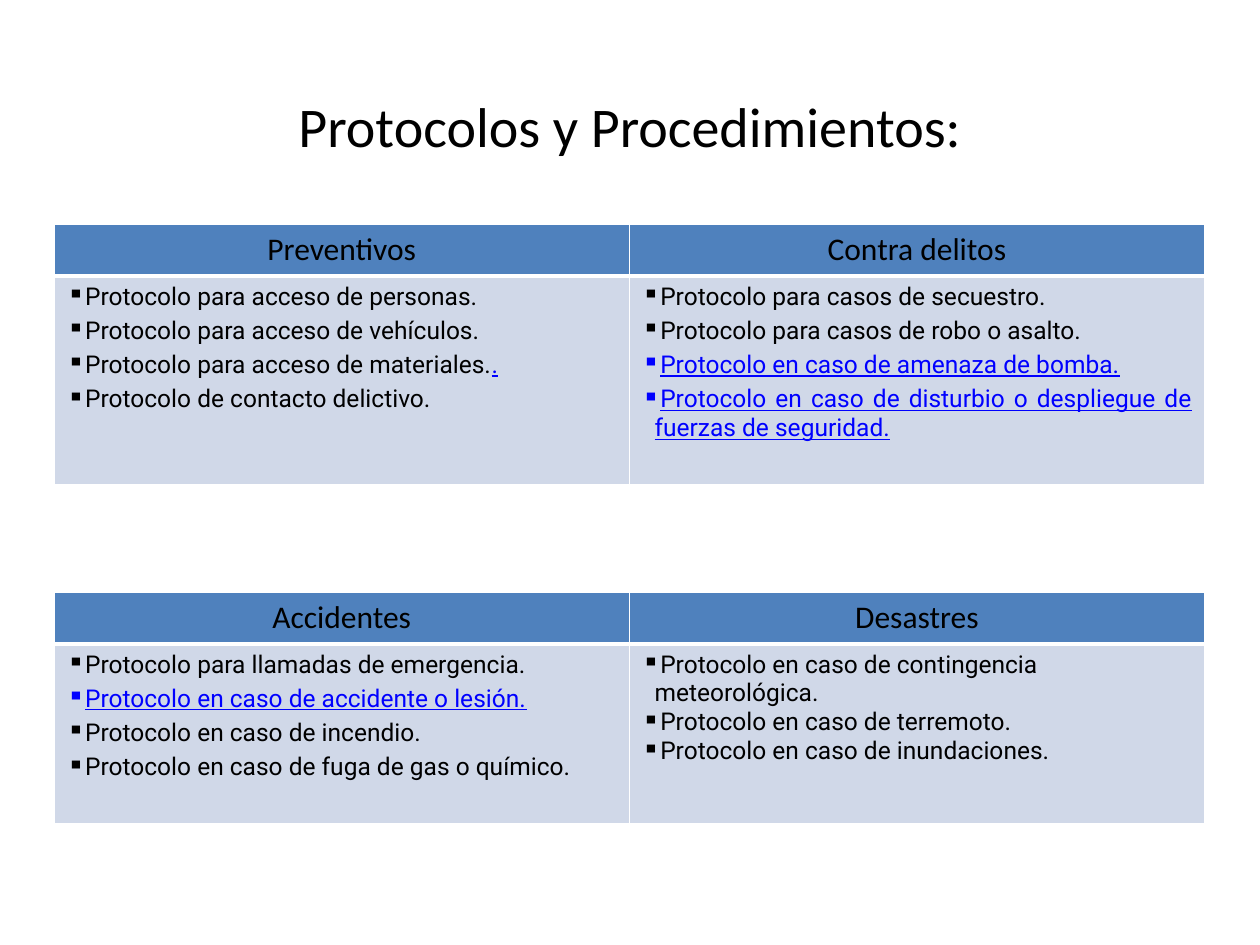
from dataclasses import dataclass
from typing import NamedTuple

from lxml import etree
from pptx import Presentation
from pptx import util as u
from pptx.dml.color import RGBColor
from pptx.enum import text
from pptx.oxml.ns import qn

COLORS = {"text": "000000", "link": "0000FF", "header": "4F81BD",
          "body": "D0D8E8", "border": "FFFFFF"}
LEFT, WIDTH, HEADER_HEIGHT = 0.43, 9.13, 0.41
JUSTIFY, ALIGN_LEFT = text.PP_ALIGN.JUSTIFY, text.PP_ALIGN.LEFT


class Item(NamedTuple):
    label: str
    hang: float = 0.1
    link: bool = False
    linked_tail: str = ""


@dataclass
class Group:
    title: str
    items: list[Item]
    align: text.PP_ALIGN = JUSTIFY
    space_after: float = 3


@dataclass
class Block:
    top: float
    body_height: float
    groups: list[Group]


BLOCKS = [
    Block(1.78, 1.66, [
        Group("Preventivos", [
            Item("Protocolo para acceso de personas.", 0),
            Item("Protocolo para acceso de vehículos.", 0),
            Item("Protocolo para acceso de materiales.", 0, linked_tail="."),
            Item("Protocolo de contacto delictivo.", 0),
        ]),
        Group("Contra delitos", [
            Item("Protocolo para casos de secuestro."),
            Item("Protocolo para casos de robo o asalto."),
            Item("Protocolo en caso de amenaza de bomba.", link=True),
            Item("Protocolo en caso de disturbio o despliegue de fuerzas de "
                 "seguridad.", link=True),
        ]),
    ]),
    Block(4.7, 1.43, [
        Group("Accidentes", [
            Item("Protocolo para llamadas de emergencia.", 0.11),
            Item("Protocolo en caso de accidente o lesión.", link=True),
            Item("Protocolo en caso de incendio."),
            Item("Protocolo en caso de fuga de gas o químico."),
        ]),
        Group("Desastres", [
            Item("Protocolo en caso de contingencia meteorológica."),
            Item("Protocolo en caso de terremoto.", 0),
            Item("Protocolo en caso de inundaciones.", 0),
        ], ALIGN_LEFT, 0),
    ]),
]


def rgb(name: str) -> RGBColor:
    return RGBColor.from_string(COLORS[name])


def style_run(r, size: float, face: str, link: bool = False) -> None:
    r.font.size = u.Pt(size)
    r.font.name = face
    r.font.color.rgb = rgb("link" if link else "text")
    r.font.underline = link


def write_heading(tf, label: str, size: float) -> None:
    p = tf.paragraphs[0]
    p.text = label
    p.alignment = text.PP_ALIGN.CENTER
    style_run(p.runs[0], size, "Calibri")


def style_cell(cell, fill: str, bottom: float = 1) -> None:
    """Set the fill and the white borders, whose bottom width may differ."""
    tc_pr = cell._tc.get_or_add_tcPr()
    for side, width in (("L", 1), ("R", 1), ("T", 1), ("B", bottom)):
        ln = etree.SubElement(tc_pr, qn(f"a:ln{side}"), w=str(u.Pt(width)))
        solid = etree.SubElement(ln, qn("a:solidFill"))
        etree.SubElement(solid, qn("a:srgbClr"), val=COLORS["border"])
    cell.fill.solid()
    cell.fill.fore_color.rgb = rgb(fill)


def add_bullet(p, hang: float) -> None:
    p_pr = p._p.get_or_add_pPr()
    p_pr.set("marL", str(u.Inches(hang)))
    p_pr.set("indent", str(-u.Inches(hang)))
    etree.SubElement(p_pr, qn("a:buChar"), char="▪")


def write_items(tf, group: Group) -> None:
    tf.text = "\n".join(item.label for item in group.items)
    for p, item in zip(tf.paragraphs, group.items):
        add_bullet(p, item.hang)
        p.alignment = group.align
        p.space_after = u.Pt(group.space_after)
        style_run(p.runs[0], 14, "Roboto", item.link)
        if item.linked_tail:
            r = p.add_run()
            r.text = item.linked_tail
            style_run(r, 14, "Roboto", True)


def add_block(s, block: Block) -> None:
    table = s.shapes.add_table(
        2, len(block.groups), u.Inches(LEFT), u.Inches(block.top),
        u.Inches(WIDTH), u.Inches(HEADER_HEIGHT + block.body_height)).table
    table.rows[0].height = u.Inches(HEADER_HEIGHT)
    table.rows[1].height = u.Inches(block.body_height)
    for col, group in enumerate(block.groups):
        header, body = table.cell(0, col), table.cell(1, col)
        style_cell(header, "header", bottom=3)
        write_heading(header.text_frame, group.title, 18)
        style_cell(body, "body")
        write_items(body.text_frame, group)


def main() -> None:
    prs = Presentation()
    prs.slide_width, prs.slide_height = u.Inches(10), u.Inches(7.5)
    s = prs.slides.add_slide(prs.slide_layouts[6])
    title = s.shapes.add_textbox(u.Inches(0.59), u.Inches(0.68),
                                 u.Inches(8.82), u.Inches(0.64))
    title.text_frame.word_wrap = True
    write_heading(title.text_frame, "Protocolos y Procedimientos:", 32)
    for block in BLOCKS:
        add_block(s, block)
    prs.save("out.pptx")


if __name__ == "__main__":
    main()
